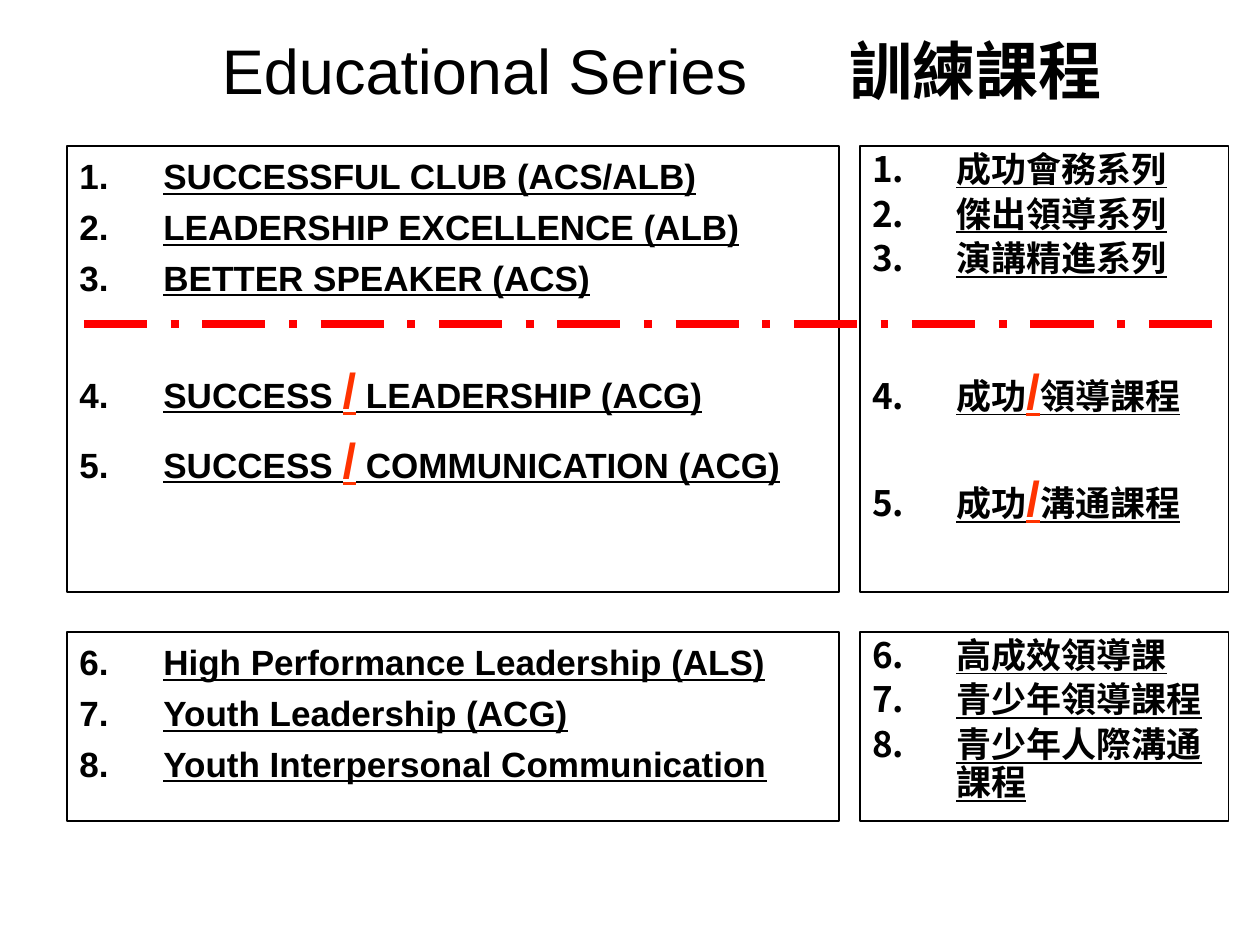
from lxml import etree
from pptx import Presentation, util as u
from pptx.dml.color import RGBColor
from pptx.enum import dml, shapes, text
from pptx.oxml.ns import qn

PX = 914400 // 126
THEME = {
    "font": "Arial",
    "ink": RGBColor(0, 0, 0),
    "slash": RGBColor(0xFF, 0x33, 0),
    "divider": RGBColor(0xFF, 0, 0),
    "title": u.Pt(36),
    "body": u.Pt(20),
    "large": u.Pt(28),
    "border": u.Pt(0.75),
    "divider_width": u.Pt(4.5),
}
TITLE = ("Educational Series", "訓練課程")
TITLE_BOX = (94, 26, 1134, 87)
TITLE_INSET, TITLE_TAB = 128, 628
HANGING = 84
DIVIDER = (84, 324, 1228, 324)

ENGLISH = {"left": 67, "width": 772, "gap": 5, "spacing": 1.0, "inset": 9}
CHINESE = {"left": 860, "width": 369, "gap": 4, "spacing": 0.9, "inset": 6}
UPPER = {"top": 146, "height": 446, "start": 1}
LOWER = {"top": 632, "height": 189, "start": 6}
LISTS = [
    (ENGLISH, UPPER, [
        "SUCCESSFUL CLUB (ACS/ALB)",
        "LEADERSHIP EXCELLENCE (ALB)",
        "BETTER SPEAKER (ACS)",
        ("SUCCESS ", "/", " LEADERSHIP (ACG)"),
        ("SUCCESS ", "/", " COMMUNICATION (ACG)"),
    ], {3: 34.6, 4: 6.6}),
    (CHINESE, UPPER, [
        "成功會務系列",
        "傑出領導系列",
        "演講精進系列",
        ("成功", "/", "領導課程"),
        ("成功", "/", "溝通課程"),
    ], {3: 50, 4: 31}),
    (ENGLISH, LOWER, [
        "High Performance Leadership (ALS)",
        "Youth Leadership (ACG)",
        "Youth Interpersonal Communication",
    ], {}),
    (CHINESE, LOWER, [
        "高成效領導課",
        "青少年領導課程",
        "青少年人際溝通課程",
    ], {}),
]


def px(*lengths):
    return [length * PX for length in lengths]


def apply(target, **values):
    for name, value in values.items():
        setattr(target, name, value)


def add_span(para, words, size, color, **values):
    span = para.add_run()
    span.text = words
    apply(span.font, name=THEME["font"], size=size, **values)
    span.font.color.rgb = color


def add_title(page):
    title = page.shapes.title
    left, top, width, height = px(*TITLE_BOX)
    apply(title, left=left, top=top, width=width, height=height)
    frame = title.text_frame
    apply(frame, margin_left=TITLE_INSET * PX, word_wrap=True,
          auto_size=text.MSO_AUTO_SIZE.NONE,
          vertical_anchor=text.MSO_ANCHOR.MIDDLE)
    para = frame.paragraphs[0]
    para.alignment = text.PP_ALIGN.LEFT
    tabs = etree.SubElement(para._p.get_or_add_pPr(), qn("a:tabLst"))
    etree.SubElement(tabs, qn("a:tab"), pos=str(TITLE_TAB * PX), algn="l")
    english, chinese = TITLE
    add_span(para, english + "\t", THEME["title"], THEME["ink"])
    add_span(para, chinese, THEME["title"], THEME["ink"], bold=True)


def number(para, start):
    props = para._p.get_or_add_pPr()
    props.set("marL", str(HANGING * PX))
    props.set("indent", str(-HANGING * PX))
    etree.SubElement(props, qn("a:buAutoNum"), type="arabicPeriod", startAt=str(start))


def add_list(page, column, row, items, gaps):
    box = page.shapes.add_textbox(
        *px(column["left"], row["top"], column["width"], row["height"]))
    box.line.color.rgb = THEME["ink"]
    box.line.width = THEME["border"]
    frame = box.text_frame
    apply(frame, word_wrap=True, margin_top=column["inset"] * PX)
    for index, item in enumerate(items):
        para = frame.add_paragraph() if index else frame.paragraphs[0]
        number(para, row["start"])
        para.line_spacing = column["spacing"]
        if index:
            para.space_before = u.Pt(gaps.get(index, column["gap"]))
        for words in [item] if isinstance(item, str) else item:
            slash = words == "/"
            add_span(para, words, THEME["large" if slash else "body"],
                     THEME["slash" if slash else "ink"], bold=True, underline=True)


def add_divider(page):
    divider = page.shapes.add_connector(shapes.MSO_CONNECTOR.STRAIGHT, *px(*DIVIDER))
    divider.line.color.rgb = THEME["divider"]
    apply(divider.line, width=THEME["divider_width"],
          dash_style=dml.MSO_LINE.LONG_DASH_DOT)
    etree.SubElement(divider._element.spPr, qn("a:effectLst"))


def main():
    deck = Presentation()
    apply(deck, slide_width=u.Inches(10), slide_height=u.Inches(7.5))
    page = deck.slides.add_slide(deck.slide_layouts[5])
    add_title(page)
    for entry in LISTS:
        add_list(page, *entry)
    add_divider(page)
    deck.save("out.pptx")


if __name__ == "__main__":
    main()
